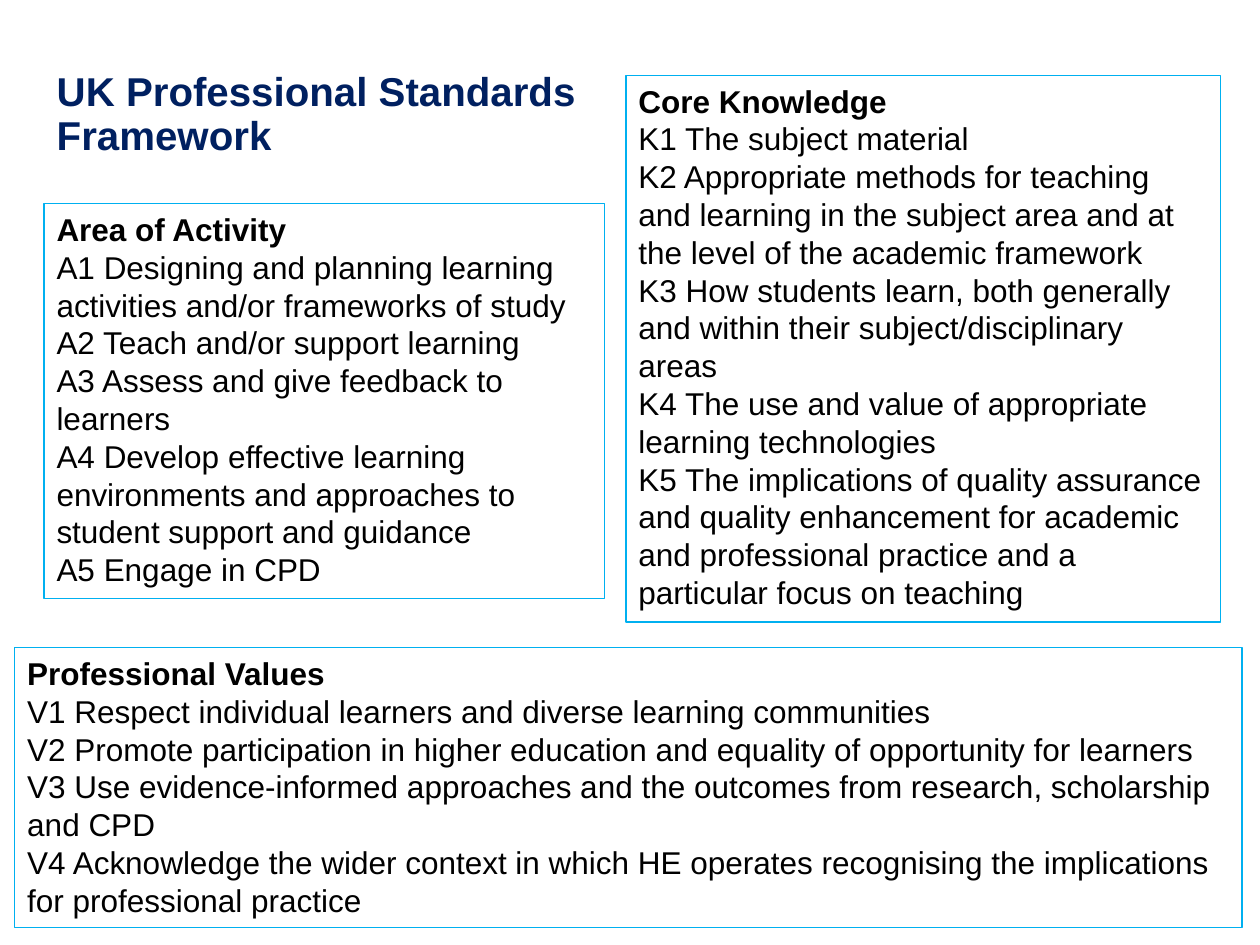
from dataclasses import dataclass

import pptx
import pptx.dml.color
import pptx.enum.shapes
import pptx.enum.text
import pptx.util
from pptx.util import Cm

NAVY = pptx.dml.color.RGBColor(0x00, 0x20, 0x60)
SKY = pptx.dml.color.RGBColor(0x00, 0xB0, 0xF0)
BLACK = pptx.dml.color.RGBColor(0x00, 0x00, 0x00)
FONT = "Arial"
TITLE_ONLY = 5


@dataclass(frozen=True)
class Dimension:
    """One dimension of the framework; lengths in centimetres."""
    heading: str
    items: tuple[str, ...]
    left: float
    top: float
    width: float
    height: float


DIMENSIONS = (
    Dimension("Area of Activity", (
        "A1 Designing and planning learning activities and/or frameworks of study",
        "A2 Teach and/or support learning",
        "A3 Assess and give feedback to learners",
        "A4 Develop effective learning environments and approaches to student support and guidance",
        "A5 Engage in CPD",
    ), 0.89, 4.11, 11.3, 7.95),
    Dimension("Core Knowledge", (
        "K1 The subject material",
        "K2 Appropriate methods for teaching and learning in the subject area and at the level of the academic framework",
        "K3 How students learn, both generally and within their subject/disciplinary areas",
        "K4 The use and value of appropriate learning technologies",
        "K5 The implications of quality assurance and quality enhancement for academic and professional practice and a particular focus on teaching",
    ), 12.62, 1.52, 11.99, 11.02),
    Dimension("Professional Values", (
        "V1 Respect individual learners and diverse learning communities",
        "V2 Promote participation in higher education and equality of opportunity for learners",
        "V3 Use evidence-informed approaches and the outcomes from research, scholarship and CPD",
        "V4 Acknowledge the wider context in which HE operates recognising the implications for professional practice",
    ), 0.3, 13.06, 24.74, 5.64),
)


def write(paragraph, text: str, *, size: float = 18, bold: bool = False,
          color: pptx.dml.color.RGBColor = BLACK, line_spacing: float = 1.0) -> None:
    paragraph.alignment = pptx.enum.text.PP_ALIGN.LEFT
    paragraph.line_spacing = line_spacing
    run = paragraph.add_run()
    run.text = text
    run.font.name = FONT
    run.font.size = pptx.util.Pt(size)
    run.font.bold = bold
    run.font.color.rgb = color


def prepare_frame(frame, auto_size: pptx.enum.text.MSO_AUTO_SIZE) -> None:
    frame.word_wrap = True
    frame.auto_size = auto_size
    frame.vertical_anchor = pptx.enum.text.MSO_ANCHOR.TOP


def draw_title(slide, text: str) -> None:
    title = slide.shapes.title
    title.left, title.top = Cm(0.89), Cm(1.32)
    title.width, title.height = Cm(11.3), Cm(1.42)
    prepare_frame(title.text_frame, pptx.enum.text.MSO_AUTO_SIZE.NONE)
    write(title.text_frame.paragraphs[0], text, size=23, bold=True,
          color=NAVY, line_spacing=0.9)


def draw_dimension(slide, dimension: Dimension) -> None:
    panel = slide.shapes.add_shape(
        pptx.enum.shapes.MSO_SHAPE.RECTANGLE,
        Cm(dimension.left), Cm(dimension.top),
        Cm(dimension.width), Cm(dimension.height))
    panel.shadow.inherit = False
    panel.fill.background()
    panel.line.color.rgb = SKY
    panel.line.width = pptx.util.Pt(0.75)

    frame = panel.text_frame
    prepare_frame(frame, pptx.enum.text.MSO_AUTO_SIZE.SHAPE_TO_FIT_TEXT)
    write(frame.paragraphs[0], dimension.heading, bold=True)
    for item in dimension.items:
        write(frame.add_paragraph(), item)


def main() -> None:
    presentation = pptx.Presentation()
    presentation.slide_width, presentation.slide_height = Cm(25.4), Cm(19.05)
    slide = presentation.slides.add_slide(presentation.slide_layouts[TITLE_ONLY])

    # Title
    draw_title(slide, "UK Professional Standards Framework")

    # Framework dimensions
    for dimension in DIMENSIONS:
        draw_dimension(slide, dimension)

    presentation.save("out.pptx")


if __name__ == "__main__":
    main()
